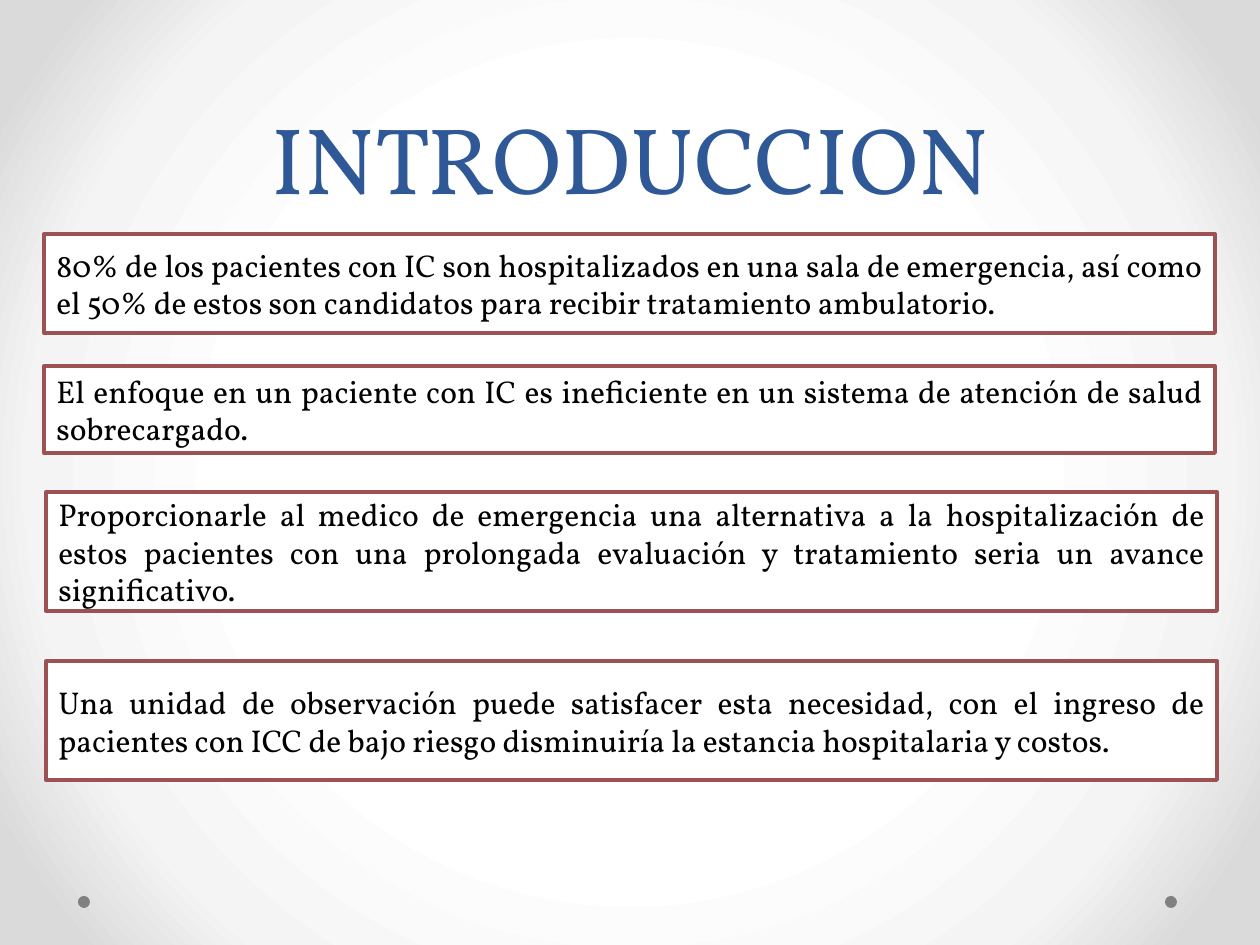
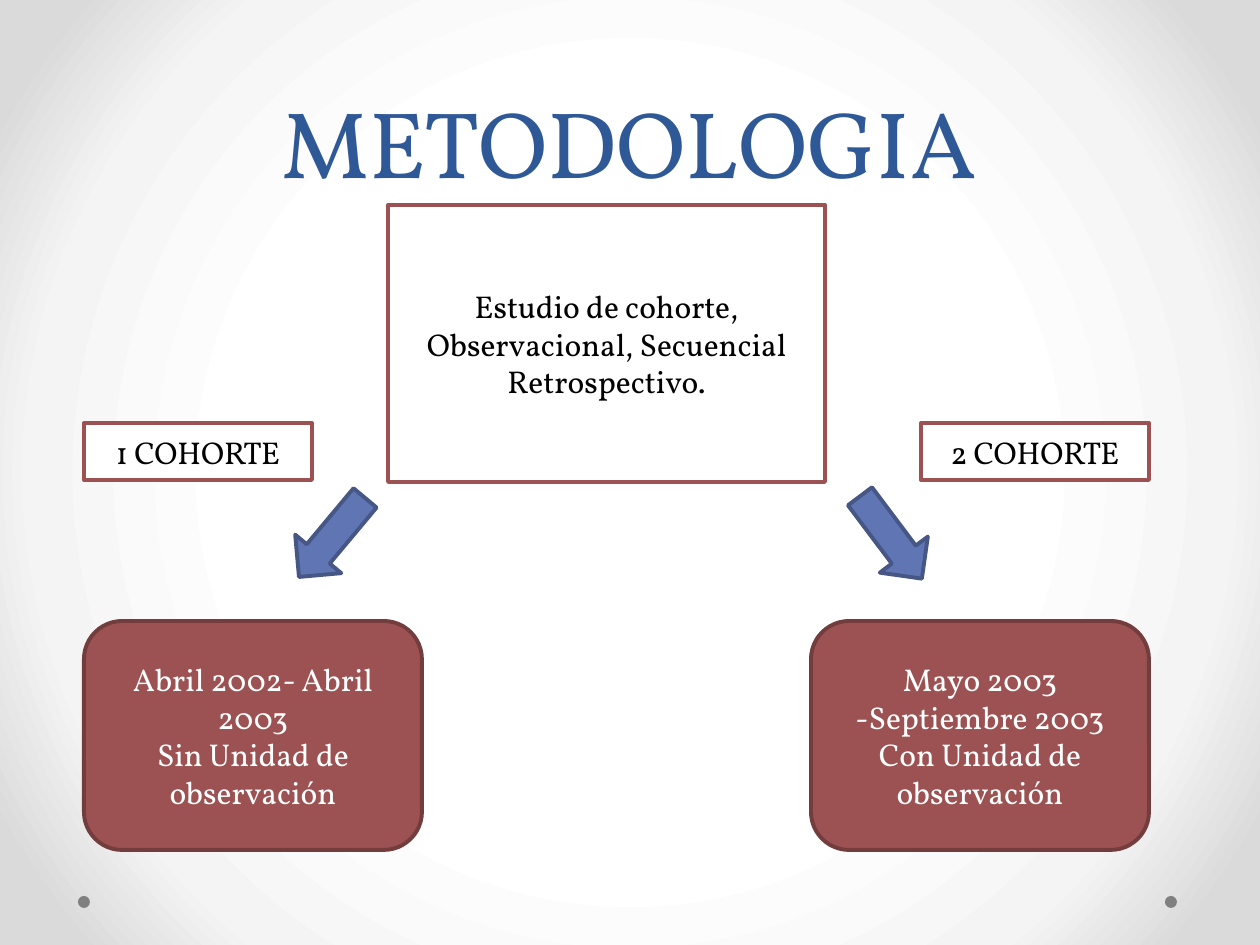
from pptx import Presentation
from pptx.dml.color import RGBColor
from pptx.enum.shapes import MSO_SHAPE
from pptx.enum.text import MSO_ANCHOR, PP_ALIGN
from pptx.oxml import parse_xml
from pptx.util import Emu, Pt

SCALE = 914400 / 126
FONT = "Vollkorn"
BLUE, RED, WHITE, BLACK, GREY = "2F5897", "9C5252", "FFFFFF", "000000", "808080"
DARK, ARROW, EDGE = "733D3D", "6076B4", "475785"
STOPS = [(50, WHITE), (76, "F4F4F4"), (92, "DADADA")]
SPACE = "http://schemas.openxmlformats.org/drawingml/2006/main"


def px(*sizes):
    """Turn px lengths into EMU."""
    return [Emu(round(size * SCALE)) for size in sizes]


def paint(fill, color):
    """Set a solid fill from a hex string."""
    fill.solid()
    fill.fore_color.rgb = RGBColor.from_string(color)


def shade(master):
    """Give the master a radial backdrop."""
    master.background.fill.gradient()
    old = next(master.element.iter(f"{{{SPACE}}}gradFill"))
    stops = "".join(f'<a:gs pos="{pos * 1000}"><a:srgbClr val="{color}"/></a:gs>'
                    for pos, color in STOPS)
    new = parse_xml(
        f'<a:gradFill xmlns:a="{SPACE}" rotWithShape="1"><a:gsLst>{stops}</a:gsLst>'
        '<a:path path="circle"><a:fillToRect l="50000" t="50000" r="50000" b="50000"/>'
        '</a:path></a:gradFill>')
    old.getparent().replace(old, new)


def write(shape, lines, color=BLACK, size=18, align=PP_ALIGN.CENTER,
          anchor=MSO_ANCHOR.MIDDLE, pitch=None):
    """Fill a shape with one paragraph per line."""
    frame = shape.text_frame
    frame.word_wrap = True
    frame.vertical_anchor = anchor
    for index, line in enumerate(lines):
        para = frame.add_paragraph() if index else frame.paragraphs[0]
        para.alignment = align
        para.line_spacing = pitch
        run = para.add_run()
        run.text = line
        run.font.name = FONT
        run.font.size = Pt(size)
        run.font.color.rgb = RGBColor.from_string(color)


def draw(slide, kind, box, fill, edge=None, turn=0):
    """Add a flat preset shape."""
    shape = slide.shapes.add_shape(kind, *px(*box))
    shape.shadow.inherit = False
    shape.rotation = turn
    paint(shape.fill, fill)
    if edge:
        paint(shape.line.fill, edge)
        shape.line.width = Pt(2.25)
    else:
        shape.line.fill.background()
    return shape


def frame(slide, box, lines, align=PP_ALIGN.CENTER):
    """Add a white box with a red border."""
    write(draw(slide, MSO_SHAPE.RECTANGLE, box, WHITE, RED), lines, align=align)


def card(slide, box, lines):
    """Add a rounded red box."""
    write(draw(slide, MSO_SHAPE.ROUNDED_RECTANGLE, box, RED, DARK), lines, WHITE)


def start(deck, title, box):
    """Add a slide with its dots and title."""
    slide = deck.slides.add_slide(deck.slide_layouts[6])
    for left in (1165, 78):
        draw(slide, MSO_SHAPE.OVAL, (left, 896, 12, 12), GREY)
    text = slide.shapes.add_textbox(*px(*box))
    write(text, [title], BLUE, 54, anchor=MSO_ANCHOR.BOTTOM, pitch=Pt(58))
    return slide


def intro(deck):
    """Build the introduction."""
    slide = start(deck, "INTRODUCCION", (63, 0, 1134, 220))
    points = [
        (44, 234, 99, "80% de los pacientes con IC son hospitalizados en una sala de "
         "emergencia, así como el 50% de estos son candidatos para recibir "
         "tratamiento ambulatorio."),
        (44, 366, 87, "El enfoque en un paciente con IC es ineficiente en un sistema "
         "de atención de salud sobrecargado."),
        (46, 492, 119, "Proporcionarle al medico de emergencia una alternativa a la "
         "hospitalización de estos pacientes con una prolongada evaluación y "
         "tratamiento seria un avance significativo."),
        (46, 661, 119, "Una unidad de observación puede satisfacer esta necesidad, con "
         "el ingreso de pacientes con ICC de bajo riesgo disminuiría la estancia "
         "hospitalaria y costos."),
    ]
    for left, top, height, text in points:
        frame(slide, (left, top, 1171, height), [text], PP_ALIGN.JUSTIFY)


def method(deck):
    """Build the study design."""
    slide = start(deck, "METODOLOGIA", (62, 47, 1134, 157))
    frame(slide, (388, 205, 437, 277),
          ["Estudio de cohorte,", "Observacional, Secuencial", "Retrospectivo."])
    groups = [
        ("1 COHORTE", 84, 302, 39.9, 84,
         ["Abril 2002- Abril 2003", "Sin Unidad de observación"]),
        ("2 COHORTE", 921, 861, 323.1, 811,
         ["Mayo 2003 -Septiembre 2003", "Con Unidad de observación"]),
    ]
    for name, tag, tip, turn, left, lines in groups:
        frame(slide, (tag, 423, 228, 57), [name])
        draw(slide, MSO_SHAPE.DOWN_ARROW, (tip, 486, 60, 103), ARROW, EDGE, turn)
        card(slide, (left, 621, 338, 229), lines)


def main():
    """Build and save the deck."""
    deck = Presentation()
    deck.slide_width, deck.slide_height = px(1260, 945)
    shade(deck.slide_master)
    intro(deck)
    method(deck)
    deck.save("out.pptx")


if __name__ == "__main__":
    main()
